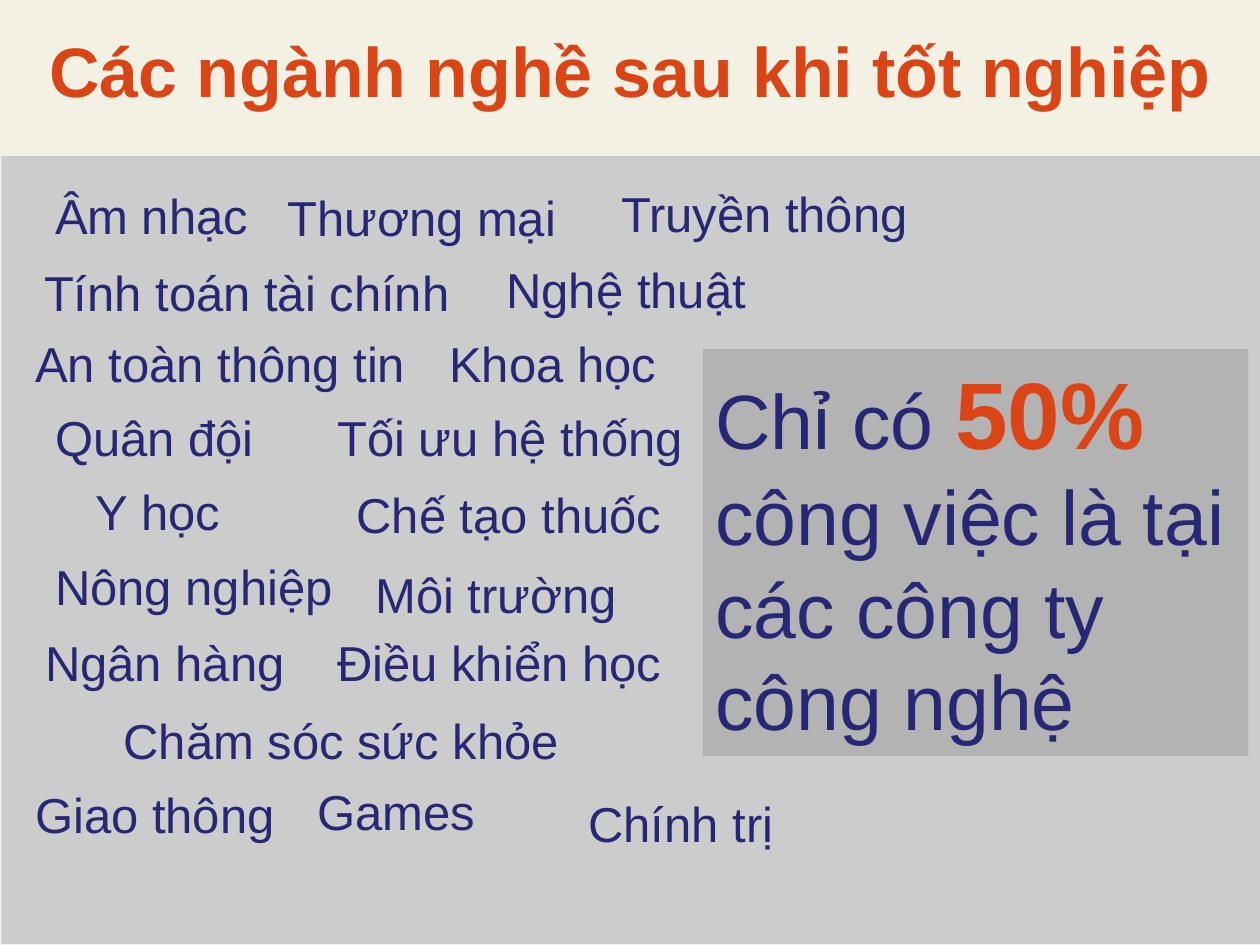
from dataclasses import dataclass

from pptx import Presentation
from pptx.dml.color import RGBColor
from pptx.enum.shapes import MSO_SHAPE
from pptx.enum.text import MSO_ANCHOR, PP_ALIGN
from pptx.util import Cm, Pt

RECT = MSO_SHAPE.RECTANGLE
TOP = MSO_ANCHOR.TOP
LEFT, CENTER = PP_ALIGN.LEFT, PP_ALIGN.CENTER


@dataclass(frozen=True)
class Theme:
    font: str = "Arial"
    paper: str = "F3F1E4"
    panel: str = "CCCCCC"
    box: str = "B3B3B3"
    ink: str = "272776"
    accent: str = "DB4515"
    label: int = 28
    title: int = 40
    claim: int = 44
    figure: int = 54


class Deck:
    """Holds the theme and the current slide."""

    def __init__(self, theme):
        self.theme = theme
        self.file = Presentation()
        self.file.slide_width, self.file.slide_height = Cm(25.4), Cm(19.05)
        self.slide = self.file.slides.add_slide(self.file.slide_layouts[6])
        self.paint(self.slide.background.fill, theme.paper)

    def paint(self, fill, color):
        fill.solid()
        fill.fore_color.rgb = RGBColor.from_string(color)

    def style(self, run, size, color, bold=False):
        font = run.font
        font.name, font.size, font.bold = self.theme.font, Pt(size), bold
        font.color.rgb = RGBColor.from_string(color)

    def panel(self, left, top, width, height, color):
        shape = self.slide.shapes.add_shape(
            RECT, Cm(left), Cm(top), Cm(width), Cm(height))
        shape.shadow.inherit = False
        shape.line.fill.background()
        self.paint(shape.fill, color)
        return shape

    def text(self, words, left, top, width, height, size, color,
             bold=False, align=LEFT, wrap=False):
        frame = self.slide.shapes.add_textbox(
            Cm(left), Cm(top), Cm(width), Cm(height)).text_frame
        frame.word_wrap = wrap
        frame.text = words
        para = frame.paragraphs[0]
        para.alignment = align
        self.style(para.runs[0], size, color, bold)

    def label(self, words, left, top, width):
        self.text(words, left, top, width, 1.45,
                  self.theme.label, self.theme.ink)

    def title(self, words):
        self.text(words, 0, 0.43, 25.4, 1.96, self.theme.title,
                  self.theme.accent, True, CENTER, True)

    def claim(self, parts, left, top, width, height):
        """Draw a filled box whose text mixes several run styles."""
        frame = self.panel(left, top, width, height,
                           self.theme.box).text_frame
        frame.word_wrap = True
        frame.vertical_anchor = TOP
        para = frame.paragraphs[0]
        para.alignment = LEFT
        for words, size, color, bold in parts:
            run = para.add_run()
            run.text = words
            self.style(run, size, color, bold)


# Each field: name, left, top, width in centimetres
FIELDS = [
    ("Âm nhạc", 0.86, 3.61, 4.45),
    ("Thương mại", 5.54, 3.66, 5.99),
    ("Truyền thông", 12.27, 3.58, 6.38),
    ("Tính toán tài chính", 0.64, 5.16, 8.79),
    ("Nghệ thuật", 9.96, 5.11, 5.41),
    ("An toàn thông tin", 0.46, 6.6, 8.08),
    ("Khoa học", 8.81, 6.6, 4.72),
    ("Quân đội", 0.86, 8.1, 4.57),
    ("Tối ưu hệ thống", 6.55, 8.1, 7.57),
    ("Y học", 1.68, 9.58, 3.05),
    ("Chế tạo thuốc", 6.94, 9.65, 6.75),
    ("Nông nghiệp", 0.86, 11.1, 6.2),
    ("Môi trường", 7.32, 11.25, 5.44),
    ("Ngân hàng", 0.66, 12.62, 5.41),
    ("Điều khiển học", 6.55, 12.62, 7.14),
    ("Chăm sóc sức khỏe", 2.24, 14.2, 9.4),
    ("Giao thông", 0.46, 15.7, 5.41),
    ("Games", 6.15, 15.62, 3.73),
    ("Chính trị", 11.61, 15.88, 4.29),
]


def main():
    theme = Theme()
    deck = Deck(theme)
    deck.panel(0.03, 3.15, 25.4, 15.88, theme.panel)
    for field in FIELDS:
        deck.label(*field)
    deck.title("Các ngành nghề sau khi tốt nghiệp")
    deck.claim([
        ("Chỉ có ", theme.claim, theme.ink, False),
        ("50% ", theme.figure, theme.accent, True),
        ("công việc là tại các công ty công nghệ",
         theme.claim, theme.ink, False),
    ], 14.17, 7.04, 11, 8.2)
    deck.file.save("out.pptx")


if __name__ == "__main__":
    main()
